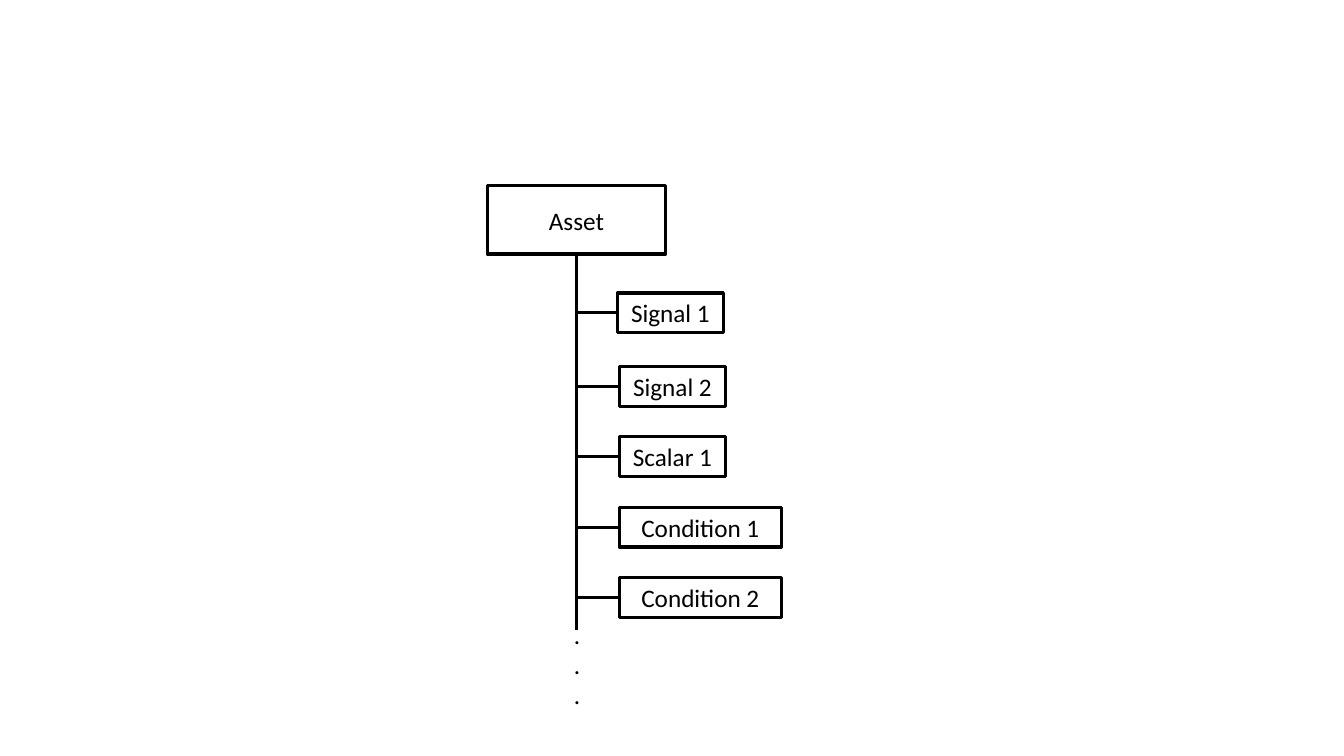
from pptx import Presentation
from pptx.dml.color import RGBColor
from pptx.enum.shapes import MSO_CONNECTOR, MSO_SHAPE
from pptx.enum.text import MSO_ANCHOR, PP_ALIGN
from pptx.oxml.ns import qn
from pptx.util import Pt
from lxml import etree

RECT = MSO_SHAPE.RECTANGLE
STRAIGHT = MSO_CONNECTOR.STRAIGHT
CENTER = PP_ALIGN.CENTER
TOP, MIDDLE = MSO_ANCHOR.TOP, MSO_ANCHOR.MIDDLE
LEFT_SIDE, BOTTOM_SIDE = 1, 2

BLACK = "000000"
LINE_WIDTH = 2.25
TRUNK_X, TRUNK_END = 549, 600
ITEM_HEIGHT, ITEM_PITCH = 38, 67
SECOND_ITEM_TOP = 349


def px(n):
    return n * 9525


def color(value):
    return RGBColor.from_string(value)


def write(sp, text, size=18, font="Calibri", fill=BLACK, anchor=MIDDLE, wrap=True):
    tf = sp.text_frame
    tf.word_wrap = wrap
    tf.vertical_anchor = anchor
    tf.text = text
    for p in tf.paragraphs:
        p.alignment = CENTER
        for r in p.runs:
            r.font.size = Pt(size)
            r.font.name = font
            r.font.color.rgb = color(fill)


def add_box(s, text, x, y, w, h):
    sp = s.shapes.add_shape(RECT, px(x), px(y), px(w), px(h))
    sp.shadow.inherit = False
    sp.fill.background()
    sp.line.color.rgb = color(BLACK)
    sp.line.width = Pt(LINE_WIDTH)
    write(sp, text, wrap=False)
    return sp


def add_line(s, x1, y1, x2, y2):
    line = s.shapes.add_connector(STRAIGHT, px(x1), px(y1), px(x2), px(y2))
    line.line.color.rgb = color(BLACK)
    line.line.width = Pt(LINE_WIDTH)
    etree.SubElement(line._element.spPr, qn("a:effectLst"))
    return line


def add_item(s, text, x, y, w):
    box = add_box(s, text, x, y, w, ITEM_HEIGHT)
    middle = y + ITEM_HEIGHT // 2
    branch = add_line(s, TRUNK_X, middle, x, middle)
    branch.end_connect(box, LEFT_SIDE)


def add_dots(s, x, y, w, h):
    sp = s.shapes.add_textbox(px(x), px(y), px(w), px(h))
    write(sp, ".\n.\n.", anchor=TOP)


def main():
    prs = Presentation()
    prs.slide_width, prs.slide_height = px(1280), px(720)
    s = prs.slides.add_slide(prs.slide_layouts[6])

    asset = add_box(s, "Asset", 464, 177, 170, 65)
    trunk = add_line(s, TRUNK_X, 242, TRUNK_X, TRUNK_END)
    trunk.begin_connect(asset, BOTTOM_SIDE)

    add_item(s, "Signal 1", 588, 279, 101)
    items = [("Signal 2", 101), ("Scalar 1", 101),
             ("Condition 1", 154), ("Condition 2", 154)]
    for i, (text, width) in enumerate(items):
        add_item(s, text, 590, SECOND_ITEM_TOP + i * ITEM_PITCH, width)

    add_dots(s, 535, 585, 29, 97)
    prs.save("out.pptx")


if __name__ == "__main__":
    main()
